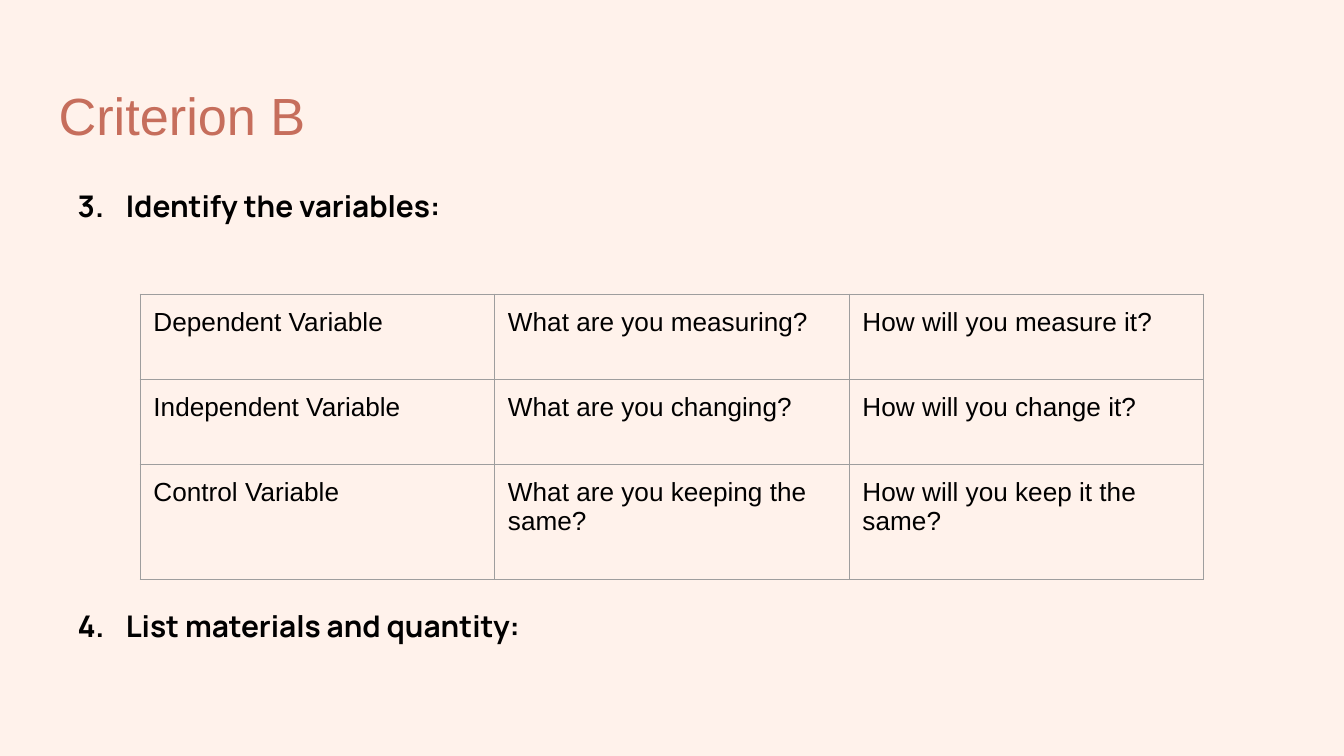
import dataclasses

import lxml.etree
import pptx
import pptx.dml.color
import pptx.enum.text
import pptx.oxml.ns
import pptx.util

Cm = pptx.util.Cm
Pt = pptx.util.Pt
qn = pptx.oxml.ns.qn


@dataclasses.dataclass(frozen=True)
class Theme:
    background: str = "FFF2EB"
    accent: str = "C66E5C"
    text: str = "000000"
    border: str = "9E9E9E"
    title_size: float = 28
    heading_size: float = 16
    table_size: float = 14
    border_width: float = 0.75
    font: str = "Arial"
    heading_font: str = "Manrope"
    inset: float = 0.25


THEME = Theme()

HEADINGS = ["Identify the variables:", "List materials and quantity:"]
FIRST_NUMBER = 3
HEADING_GAP = 203  # leaves room for the table between the headings

VARIABLES = [
    ["Dependent Variable", "What are you measuring?", "How will you measure it?"],
    ["Independent Variable", "What are you changing?", "How will you change it?"],
    ["Control Variable", "What are you keeping the same?",
     "How will you keep it the same?"],
]
COLUMN_WIDTH = 6.7
ROW_HEIGHTS = [1.61, 1.61, 2.18]


def rgb(value):
    return pptx.dml.color.RGBColor.from_string(value)


def format_runs(p, size, color, font, bold=False):
    for r in p.runs:
        r.font.size = Pt(size)
        r.font.color.rgb = rgb(color)
        r.font.name = font
        r.font.bold = bold


def set_margins(target):
    target.margin_left = target.margin_right = Cm(THEME.inset)
    target.margin_top = target.margin_bottom = Cm(THEME.inset)


def add_text_frame(s, left, top, width, height):
    tf = s.shapes.add_textbox(Cm(left), Cm(top), Cm(width), Cm(height)).text_frame
    tf.word_wrap = True
    tf.vertical_anchor = pptx.enum.text.MSO_ANCHOR.TOP
    set_margins(tf)
    return tf


def add_title(s, text):
    tf = add_text_frame(s, 0.86, 1.32, 23.67, 1.6)
    tf.text = text
    format_runs(tf.paragraphs[0], THEME.title_size, THEME.accent, THEME.font)


def number_paragraph(p, start):
    pPr = p._p.get_or_add_pPr()
    pPr.set("marL", str(Cm(1.27)))
    pPr.set("indent", str(Cm(-0.91)))
    color = lxml.etree.SubElement(pPr, qn("a:buClr"))
    lxml.etree.SubElement(color, qn("a:srgbClr"), val=THEME.text)
    lxml.etree.SubElement(pPr, qn("a:buFont"), typeface=THEME.heading_font)
    lxml.etree.SubElement(pPr, qn("a:buAutoNum"),
                          type="arabicPeriod", startAt=str(start))


def add_numbered_headings(s, headings):
    tf = add_text_frame(s, 0.86, 3.2, 23.67, 9.5)
    tf.text = "\n".join(headings)
    for i, p in enumerate(tf.paragraphs):
        p.line_spacing = 1.15
        p.space_before = Pt(HEADING_GAP if i else 0)
        number_paragraph(p, FIRST_NUMBER)
        format_runs(p, THEME.heading_size, THEME.text, THEME.heading_font, bold=True)


def set_borders(cell):
    tcPr = cell._tc.get_or_add_tcPr()
    for i, side in enumerate(("a:lnL", "a:lnR", "a:lnT", "a:lnB")):
        ln = lxml.etree.Element(qn(side), w=str(Pt(THEME.border_width)))
        fill = lxml.etree.SubElement(ln, qn("a:solidFill"))
        lxml.etree.SubElement(fill, qn("a:srgbClr"), val=THEME.border)
        tcPr.insert(i, ln)


def add_variable_table(s, rows):
    columns = len(rows[0])
    frame = s.shapes.add_table(len(rows), columns, Cm(2.65), Cm(5.56),
                               Cm(COLUMN_WIDTH * columns), Cm(sum(ROW_HEIGHTS)))
    table = frame.table
    table.first_row = table.horz_banding = False
    for column in table.columns:
        column.width = Cm(COLUMN_WIDTH)
    for row, height, texts in zip(table.rows, ROW_HEIGHTS, rows):
        row.height = Cm(height)
        for cell, text in zip(row.cells, texts):
            cell.text_frame.text = text
            format_runs(cell.text_frame.paragraphs[0], THEME.table_size,
                        THEME.text, THEME.font)
            set_margins(cell)
            cell.fill.background()
            set_borders(cell)


def main():
    prs = pptx.Presentation()
    prs.slide_width, prs.slide_height = Cm(25.4), Cm(14.29)
    s = prs.slides.add_slide(prs.slide_layouts[6])

    # Background
    s.background.fill.solid()
    s.background.fill.fore_color.rgb = rgb(THEME.background)

    # Title, numbered headings and the table between them
    add_title(s, "Criterion B")
    add_numbered_headings(s, HEADINGS)
    add_variable_table(s, VARIABLES)

    prs.save("out.pptx")


if __name__ == "__main__":
    main()
